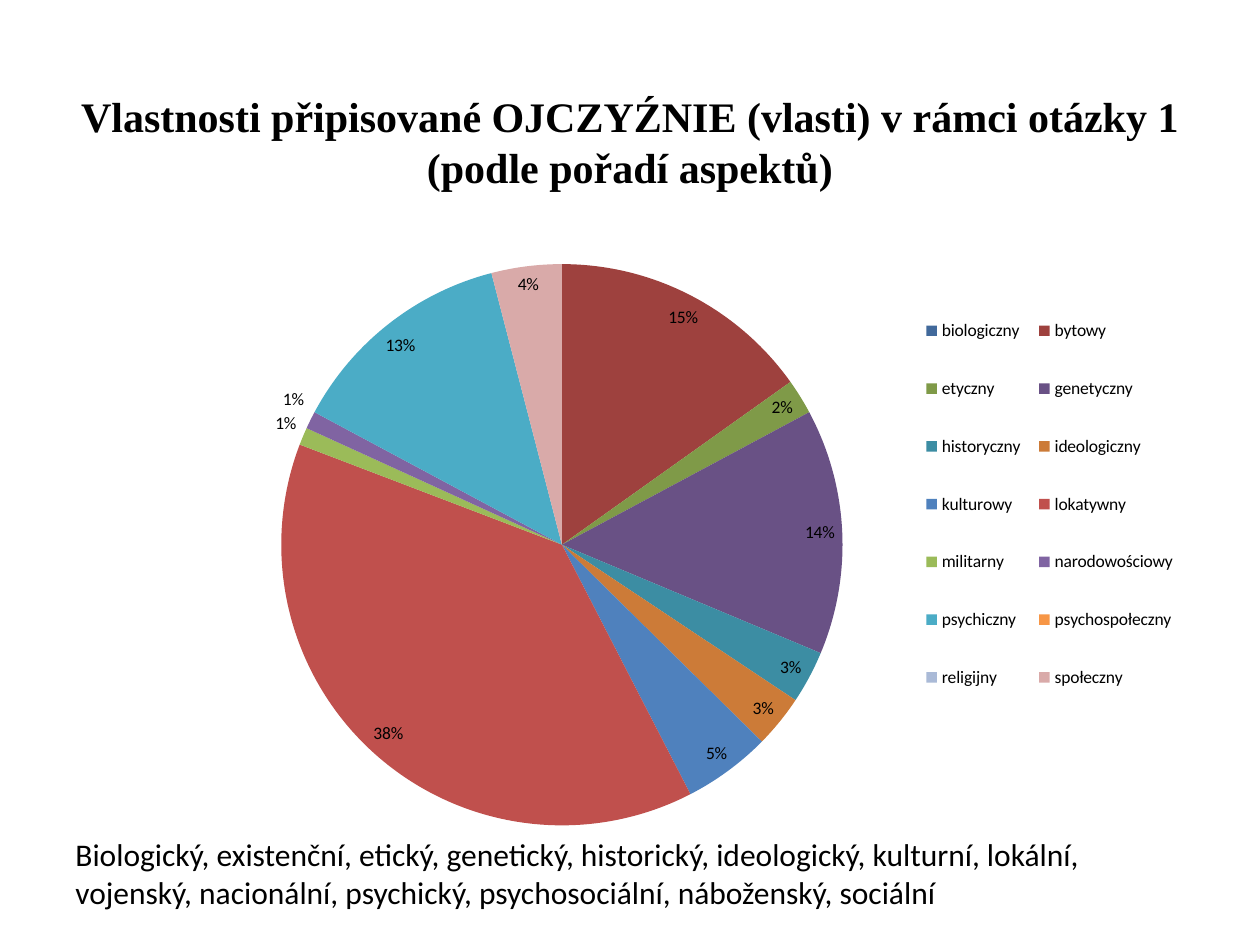
"""Builds a slide with a pie chart of aspects linked to the homeland."""
from lxml.etree import SubElement
from pptx import Presentation
from pptx.chart.data import CategoryChartData
from pptx.dml.color import RGBColor
from pptx.enum.chart import XL_CHART_TYPE, XL_LABEL_POSITION, XL_LEGEND_POSITION
from pptx.enum.text import MSO_ANCHOR, PP_ALIGN
from pptx.oxml.ns import qn
from pptx.util import Inches, Pt

COLORS = {
    "text": "000000",
    "biologiczny": "41699B",
    "bytowy": "9E413E",
    "etyczny": "7F9A48",
    "genetyczny": "695185",
    "historyczny": "3C8DA3",
    "ideologiczny": "CC7B38",
    "kulturowy": "4F81BD",
    "lokatywny": "C0504D",
    "militarny": "9BBB59",
    "narodowościowy": "8064A2",
    "psychiczny": "4BACC6",
    "psychospołeczny": "F79646",
    "religijny": "AABAD7",
    "społeczny": "D9AAA9",
}
SHARES = {
    "biologiczny": 0, "bytowy": 0.15, "etyczny": 0.02, "genetyczny": 0.14,
    "historyczny": 0.03, "ideologiczny": 0.03, "kulturowy": 0.05,
    "lokatywny": 0.38, "militarny": 0.01, "narodowościowy": 0.01,
    "psychiczny": 0.13, "psychospołeczny": 0, "religijny": 0, "społeczny": 0.04,
}
TITLE_LINES = [
    "Vlastnosti připisované OJCZYŹNIE (vlasti) v rámci otázky 1",
    "(podle pořadí aspektů)",
]
TRANSLATION = (
    "Biologický, existenční, etický, genetický, historický, ideologický, "
    "kulturní, lokální, vojenský, nacionální, psychický, psychosociální, "
    "náboženský, sociální"
)
TITLE_FONT = {"name": "Times New Roman", "size": Pt(24), "bold": True}
BODY_FONT = {"name": "Calibri", "size": Pt(18)}
CHART_FONT = {"name": "Calibri", "size": Pt(10)}


def color(name):
    """Return the named colour."""
    return RGBColor.from_string(COLORS[name])


def apply(target, values):
    """Set each attribute of the target from a dict."""
    for name, value in values.items():
        setattr(target, name, value)


def style_font(font, values):
    """Format a font in the text colour."""
    apply(font, values)
    font.color.rgb = color("text")


def add_text(page, area, lines, font, frame_format, alignment):
    """Add a wrapped text box with one paragraph per line."""
    box = page.shapes.add_textbox(*map(Inches, area))
    frame = box.text_frame
    apply(frame, {"word_wrap": True, **frame_format})
    frame.text = "\n".join(lines)
    for para in frame.paragraphs:
        para.alignment = alignment
        for span in para.runs:
            style_font(span.font, font)


def set_layout(element, index, **edges):
    """Give a chart part a manual layout in fractions of the chart."""
    for old in element.findall(qn("c:layout")):
        element.remove(old)
    layout = SubElement(element, qn("c:layout"))
    element.insert(index, layout)
    manual = SubElement(layout, qn("c:manualLayout"))
    modes = {"xMode": "edge", "yMode": "edge"}
    for tag, value in {**modes, **edges}.items():
        SubElement(manual, qn(f"c:{tag}")).set("val", str(value))


def add_pie(page, area):
    """Add the pie chart with its labels and legend."""
    data = CategoryChartData(number_format="0%")
    data.categories = list(SHARES)
    data.add_series("Series 1", list(SHARES.values()))
    chart = page.shapes.add_chart(
        XL_CHART_TYPE.PIE, *map(Inches, area), data).chart
    apply(chart, {"has_title": False, "has_legend": True})
    style_font(chart.font, CHART_FONT)
    plot = chart.plots[0]
    apply(plot, {"vary_by_categories": True, "has_data_labels": True})
    apply(plot.data_labels, {
        "show_value": True, "show_percentage": False,
        "number_format": "0%", "number_format_is_linked": False,
        "position": XL_LABEL_POSITION.BEST_FIT,
    })
    for index, name in enumerate(SHARES):
        fill = plot.series[0].points[index].format.fill
        fill.solid()
        fill.fore_color.rgb = color(name)
    apply(chart.legend, {
        "position": XL_LEGEND_POSITION.RIGHT, "include_in_layout": False})
    plot_area = chart._chartSpace.find(f".//{qn('c:plotArea')}")
    set_layout(plot_area, 0, x=0.19, y=0.07, w=0.5, h=0.9)
    set_layout(chart.legend._element, 1, x=0.75, y=0.1, w=0.24, h=0.71)


def main():
    """Build and save the deck."""
    deck = Presentation()
    apply(deck, {"slide_width": Inches(10), "slide_height": Inches(7.5)})
    page = deck.slides.add_slide(deck.slide_layouts[6])
    add_text(page, (0, 0.52, 10, 1.55), TITLE_LINES, TITLE_FONT,
             {"vertical_anchor": MSO_ANCHOR.MIDDLE, "margin_bottom": Inches(0.4)},
             PP_ALIGN.CENTER)
    add_pie(page, (0.5, 1.75, 9, 4.95))
    add_text(page, (0.5, 6.58, 9.15, 0.71), [TRANSLATION], BODY_FONT,
             {"vertical_anchor": MSO_ANCHOR.TOP}, PP_ALIGN.LEFT)
    deck.save("out.pptx")


if __name__ == "__main__":
    main()
